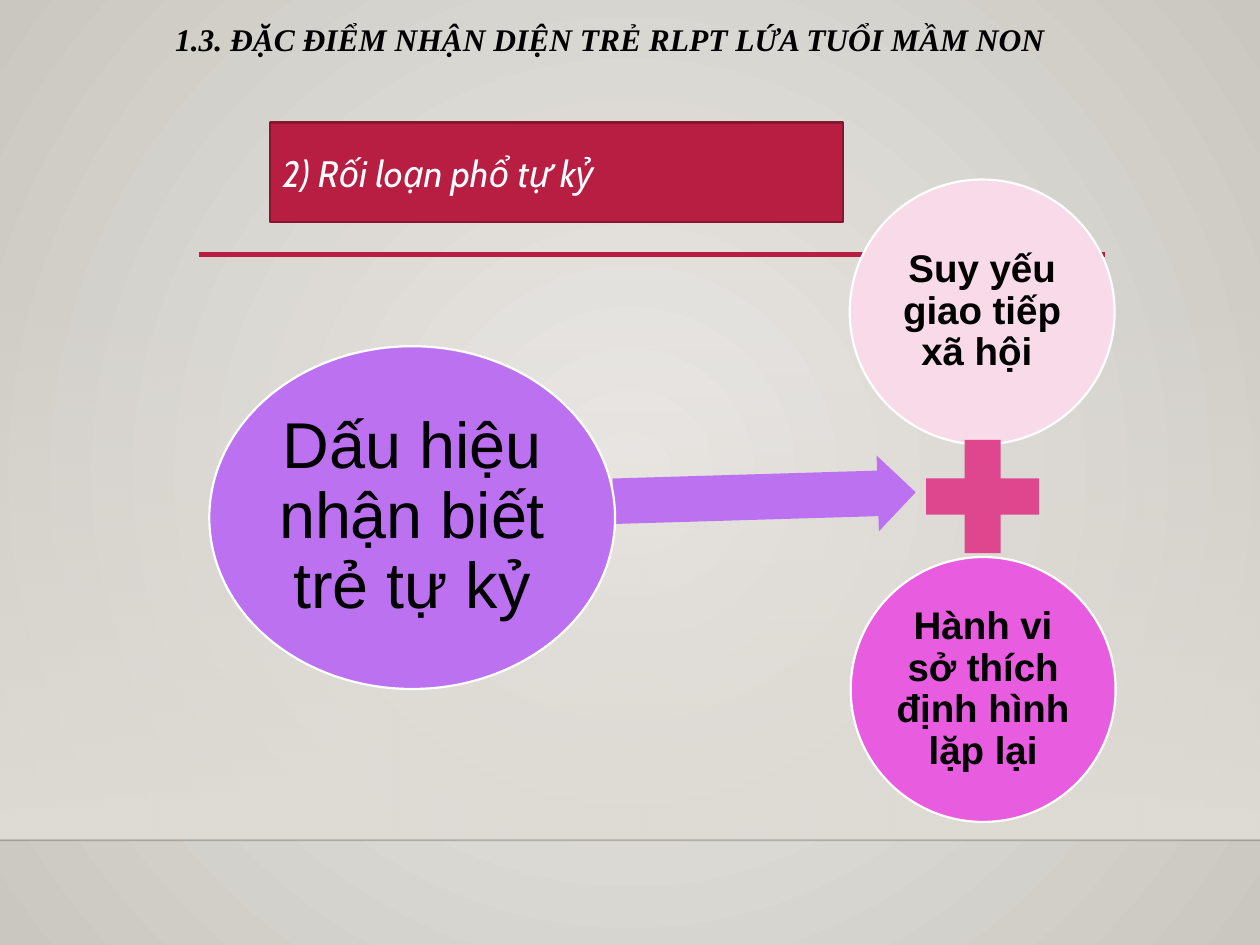
from dataclasses import dataclass

from pptx import Presentation
from pptx.dml.color import RGBColor
from pptx.enum.shapes import MSO_CONNECTOR, MSO_SHAPE
from pptx.enum.text import MSO_ANCHOR, PP_ALIGN
from pptx.oxml.ns import qn
from pptx.oxml.xmlchemy import OxmlElement
from pptx.util import Cm, Pt


@dataclass(frozen=True)
class Theme:
    """Colours, fonts and type sizes of the slide."""
    bg_inner: str = "ECEAE7"
    bg_outer: str = "CAC7C1"
    haze: str = "DFDBD5"
    ink: str = "000000"
    floor: str = "000001"
    white: str = "FFFFFF"
    crimson: str = "B71E42"
    crimson_dark: str = "871631"
    pale_pink: str = "F8DAE8"
    pink: str = "DE478E"
    magenta: str = "E85CE0"
    violet: str = "BC72F0"
    title_font: str = "Times New Roman"
    banner_font: str = "Cabin"
    body_font: str = "Arial"
    title_size: int = 18
    banner_size: int = 21
    circle_size: int = 22
    main_size: int = 37
    outline: float = 1.25


T = Theme()


def rgb(value):
    """Turn a hex string into a colour."""
    return RGBColor.from_string(value)


def set_alpha(color_parent, percent):
    """Set the opacity of the first RGB colour below an element."""
    alpha = OxmlElement("a:alpha")
    alpha.set("val", str(percent * 1000))
    color_parent.find(".//" + qn("a:srgbClr")).append(alpha)


def set_stops(fill, first, last):
    """Make a two-stop gradient."""
    fill.gradient()
    for stop, position, color in zip(fill.gradient_stops, (0, 1), (first, last)):
        stop.position = position
        stop.color.rgb = rgb(color)


def add_background(slide):
    """Fill the background with a circular gradient."""
    set_stops(slide.background.fill, T.bg_inner, T.bg_outer)
    grad = slide.element.find(".//" + qn("a:gradFill"))
    grad.remove(grad.find(qn("a:lin")))
    path = OxmlElement("a:path")
    path.set("path", "circle")
    rect = OxmlElement("a:fillToRect")
    for side in "ltrb":
        rect.set(side, "50000")
    path.append(rect)
    grad.append(path)


def add_figure(slide, kind, box, fill=None, line=None):
    """Add a flat preset shape."""
    sp = slide.shapes.add_shape(kind, *map(Cm, box))
    sp.shadow.inherit = False
    if fill:
        sp.fill.solid()
        sp.fill.fore_color.rgb = rgb(fill)
    if line:
        sp.line.color.rgb = rgb(line)
        sp.line.width = Pt(T.outline)
    else:
        sp.line.fill.background()
    return sp


def add_haze(slide, box):
    """Add a vertical fade from clear to opaque."""
    sp = add_figure(slide, MSO_SHAPE.RECTANGLE, box)
    set_stops(sp.fill, T.haze, T.haze)
    sp.fill.gradient_angle = 270
    set_alpha(sp.element.spPr.find(qn("a:gradFill")), 0)


def add_rule(slide, left, right, y, color, width):
    """Add a horizontal line."""
    cn = slide.shapes.add_connector(
        MSO_CONNECTOR.STRAIGHT, Cm(left), Cm(y), Cm(right), Cm(y))
    cn.line.color.rgb = rgb(color)
    cn.line.width = Pt(width)
    cn.element.spPr.append(OxmlElement("a:effectLst"))
    return cn


def write(sp, text, font, size, color, bold=False, italic=False,
          align=PP_ALIGN.LEFT, anchor=MSO_ANCHOR.MIDDLE, spacing=None, inset=None):
    """Write one paragraph into a shape."""
    tf = sp.text_frame
    tf.word_wrap = True
    tf.vertical_anchor = anchor
    if inset is not None:
        tf.margin_left = tf.margin_right = Cm(inset)
        tf.margin_top = tf.margin_bottom = Cm(inset)
    p = tf.paragraphs[0]
    p.alignment = align
    if spacing:
        p.line_spacing = spacing
    r = p.add_run()
    r.text = text
    r.font.name, r.font.size = font, Pt(size)
    r.font.bold, r.font.italic = bold, italic
    r.font.color.rgb = rgb(color)


def add_bubble(slide, box, fill, text, size, bold, inset):
    """Add an outlined ellipse with centred text."""
    sp = add_figure(slide, MSO_SHAPE.OVAL, box, fill, T.white)
    write(sp, text, T.body_font, size, T.ink, bold=bold,
          align=PP_ALIGN.CENTER, spacing=0.9, inset=inset)


def add_arrow(slide, box):
    """Add the slightly tilted block arrow."""
    sp = add_figure(slide, MSO_SHAPE.RIGHT_ARROW, box, T.violet)
    sp.adjustments[0], sp.adjustments[1] = 0.6, 0.5
    sp.rotation = 358.3


def add_banner(slide, box, text):
    """Add the topic banner."""
    sp = add_figure(slide, MSO_SHAPE.RECTANGLE, box, T.crimson, T.crimson_dark)
    write(sp, text, T.banner_font, T.banner_size, T.white, italic=True)


def add_title(slide, box, text):
    """Add the section title."""
    sp = slide.shapes.add_textbox(*map(Cm, box))
    write(sp, text, T.title_font, T.title_size, T.ink, bold=True, italic=True,
          anchor=MSO_ANCHOR.TOP, spacing=0.9)


def main():
    """Build the slide and save it."""
    prs = Presentation()
    prs.slide_width, prs.slide_height = Cm(25.4), Cm(19.05)
    slide = prs.slides.add_slide(prs.slide_layouts[6])
    add_background(slide)
    add_haze(slide, (0, 5.6, 25.4, 11.33))
    floor = add_rule(slide, 0, 25.4, 16.94, T.floor, 1)
    set_alpha(floor.element.spPr, 20)
    add_rule(slide, 4.01, 22.27, 5.13, T.crimson, 2.5)

    add_bubble(slide, (17.13, 3.62, 5.34, 5.34), T.pale_pink,
               "Suy yếu giao tiếp xã hội ", T.circle_size, True, 0.08)
    add_figure(slide, MSO_SHAPE.MATH_PLUS, (18.26, 8.46, 3.1, 3.1), T.pink)
    add_bubble(slide, (17.15, 11.23, 5.34, 5.34), T.magenta,
               "Hành vi sở thích định hình lặp lại", T.circle_size, True, 0.08)
    add_arrow(slide, (12.36, 9.25, 6.1, 1.53))
    add_bubble(slide, (4.22, 6.98, 8.18, 6.91), T.violet,
               "Dấu hiệu nhận biết trẻ tự kỷ", T.main_size, False, 0.13)

    add_banner(slide, (5.44, 2.47, 11.56, 2.01), "2) Rối loạn phổ tự kỷ")
    add_title(slide, (3.28, 0.36, 20.65, 1.32),
              "1.3. ĐẶC ĐIỂM NHẬN DIỆN TRẺ RLPT LỨA TUỔI MẦM NON")
    prs.save("out.pptx")


if __name__ == "__main__":
    main()
